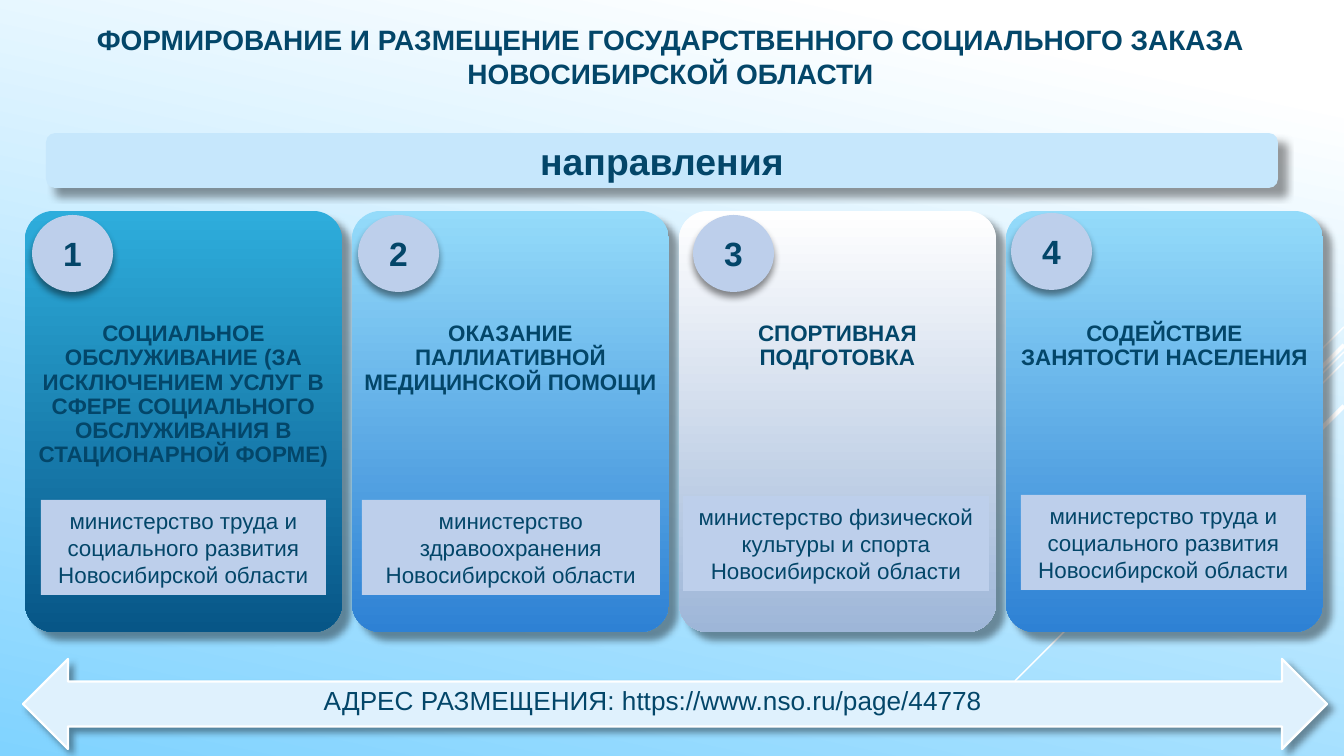
import lxml.etree
import pptx
import pptx.dml.color
import pptx.enum.shapes
import pptx.enum.text
import pptx.oxml.ns
import pptx.util

PX = 914400 / 134.4
WIDE, HIGH = 1344, 756
FORM = pptx.enum.shapes.MSO_SHAPE
ANCHOR = pptx.enum.text.MSO_ANCHOR
COLORS = {
    "ink": "034669", "white": "FFFFFF", "sky": "80D3FF", "band": "C6E7FC",
    "arrow": "DFF1FD", "label": "BDCFEB", "teal": "2EADDC", "navy": "075687",
    "aqua": "94DBFA", "blue": "2E81D4", "steel": "9EB6D8",
}
# Shadows: opacity %, blur pt, distance pt, angle
SOFT, DEEP, DROP = (40, 4, 3, 45), (40, 4, 6, 45), (46, 4, 3, 90)


def emu(px):
    return pptx.util.Emu(round(px * PX))


def tone(name):
    return pptx.dml.color.RGBColor.from_string(COLORS[name])


def blend(fill, names, start=0, angle=90):
    fill.gradient()
    fill.gradient_angle = (360 - angle) % 360
    for stop, name, place in zip(fill.gradient_stops, names, (start, 1)):
        stop.color.rgb = tone(name)
        stop.position = place


def write(shape, text, size=12, bold=False, anchor=ANCHOR.TOP, space=None,
          pad=(13, 7, 13, 7)):
    frame = shape.text_frame
    frame.word_wrap = True
    frame.vertical_anchor = anchor
    (frame.margin_left, frame.margin_top,
     frame.margin_right, frame.margin_bottom) = map(emu, pad)
    frame.text = text
    for para in frame.paragraphs:
        para.alignment = pptx.enum.text.PP_ALIGN.CENTER
        if space:
            para.line_spacing = space
        font = para.runs[0].font
        font.name, font.size, font.bold = "Arial", pptx.util.Pt(size), bold
        font.color.rgb = tone("ink")


class Deck:
    def __init__(self):
        self.file = pptx.Presentation()
        self.file.slide_width, self.file.slide_height = emu(WIDE), emu(HIGH)
        self.slide = self.file.slides.add_slide(self.file.slide_layouts[6])
        self.shapes = self.slide.shapes

    def ray(self, top, run, width):
        line = self.shapes.add_connector(
            pptx.enum.shapes.MSO_CONNECTOR.STRAIGHT,
            emu(WIDE), emu(top), emu(WIDE - run), emu(top + run))
        line.line.color.rgb = tone("white")
        line.line.width = pptx.util.Pt(width)
        props = line._element.spPr
        lxml.etree.SubElement(props, pptx.oxml.ns.qn("a:effectLst"))

    def text(self, box, text, **style):
        write(self.shapes.add_textbox(*map(emu, box)), text, **style)

    def shape(self, form, box, fill, edge=None, shade=None, round_to=None):
        shape = self.shapes.add_shape(form, *map(emu, box))
        if round_to:
            shape.adjustments[0] = round_to
        if isinstance(fill, tuple):
            blend(shape.fill, fill)
        else:
            shape.fill.solid()
            shape.fill.fore_color.rgb = tone(fill)
        if edge:
            shape.line.color.rgb = tone("white")
            shape.line.width = pptx.util.Pt(edge)
        else:
            shape.line.fill.background()
        shape.shadow.inherit = False
        if shade:
            self.shade(shape, *shade)
        return shape

    def shade(self, shape, alpha, blur, dist, angle):
        name = pptx.oxml.ns.qn
        new = lxml.etree.SubElement
        outer = new(
            shape._element.spPr.find(name("a:effectLst")),
            name("a:outerShdw"), blurRad=str(blur * 12700),
            dist=str(dist * 12700), dir=str(angle * 60000),
            algn="ctr", rotWithShape="0")
        color = new(outer, name("a:srgbClr"), val="000000")
        new(color, name("a:alpha"), val=str(alpha * 1000))


def main():
    deck = Deck()

    # Background and slanted rays
    blend(deck.slide.background.fill, ("white", "sky"), start=0.1, angle=102)
    for ray in ((327, 101, 0.75), (352, 329, 0.75), (362, 210, 0.75),
                (345, 192, 2.25), (406, 140, 2.25)):
        deck.ray(*ray)

    # Title
    deck.text((20, 16, 1301, 82),
              "ФОРМИРОВАНИЕ И РАЗМЕЩЕНИЕ ГОСУДАРСТВЕННОГО СОЦИАЛЬНОГО ЗАКАЗА\n"
              "НОВОСИБИРСКОЙ ОБЛАСТИ", size=15, bold=True)

    # Address arrow
    deck.shape(FORM.LEFT_RIGHT_ARROW, (23, 659, 1304, 90), "arrow",
               edge=1.25, shade=SOFT)
    deck.text((28, 677, 1250, 46),
              "АДРЕС РАЗМЕЩЕНИЯ: https://www.nso.ru/page/44778", size=14)

    # Heading band
    band = deck.shape(FORM.ROUNDED_RECTANGLE, (46, 133, 1232, 55), "band",
                      shade=DEEP)
    write(band, "направления", size=20, bold=True, anchor=ANCHOR.MIDDLE)

    # Cards: heading, fill, ministry, label box, badge corner
    labor = "министерство труда и социального развития Новосибирской области"
    cards = [
        ("СОЦИАЛЬНОЕ ОБСЛУЖИВАНИЕ (ЗА ИСКЛЮЧЕНИЕМ УСЛУГ В СФЕРЕ СОЦИАЛЬНОГО "
         "ОБСЛУЖИВАНИЯ В СТАЦИОНАРНОЙ ФОРМЕ)", ("teal", "navy"),
         labor, (41, 500, 285, 95), (32, 215)),
        ("ОКАЗАНИЕ ПАЛЛИАТИВНОЙ МЕДИЦИНСКОЙ ПОМОЩИ", ("aqua", "blue"),
         "министерство здравоохранения Новосибирской области",
         (362, 500, 298, 95), (358, 215)),
        ("СПОРТИВНАЯ ПОДГОТОВКА", ("white", "steel"),
         "министерство физической культуры и спорта Новосибирской области",
         (683, 496, 306, 95), (693, 215)),
        ("СОДЕЙСТВИЕ ЗАНЯТОСТИ НАСЕЛЕНИЯ", ("aqua", "blue"),
         labor, (1021, 495, 285, 95), (1011, 213)),
    ]
    for i, (head, fill, office, box, spot) in enumerate(cards):
        card = deck.shape(FORM.ROUNDED_RECTANGLE,
                          (25 + 327 * i, 211, 317, 421), fill,
                          shade=DEEP, round_to=0.09)
        write(card, head, bold=True, space=0.9, pad=(3, 103, 3, 98))
        write(deck.shape(FORM.RECTANGLE, box, "label"), office)
        badge = deck.shape(FORM.OVAL, (*spot, 81, 77), "label", shade=DROP)
        write(badge, str(i + 1), size=18, bold=True, anchor=ANCHOR.MIDDLE)

    deck.file.save("out.pptx")


if __name__ == "__main__":
    main()
